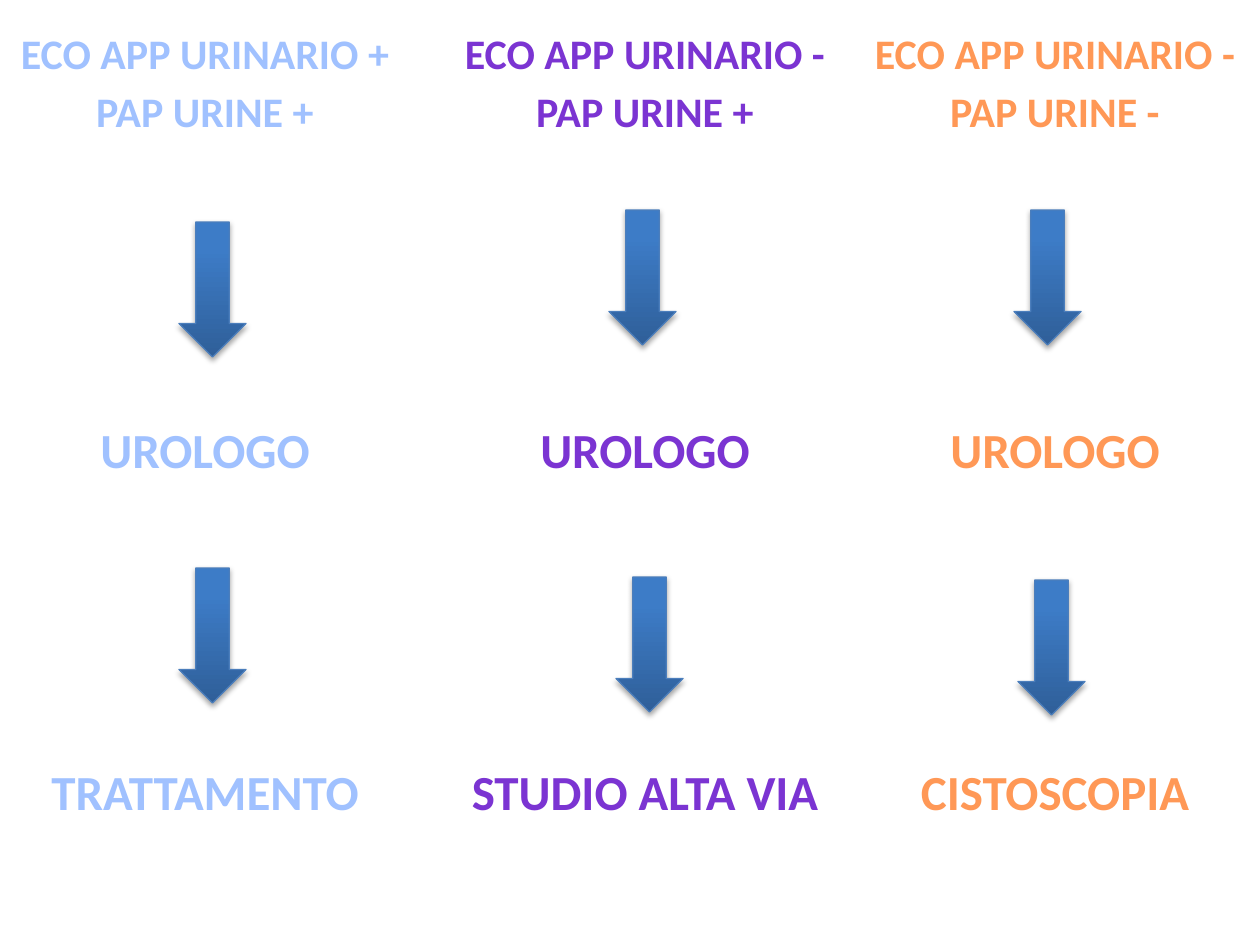
from dataclasses import dataclass

from pptx import Presentation
from pptx.dml.color import RGBColor
from pptx.enum.shapes import MSO_SHAPE
from pptx.enum.text import PP_ALIGN
from pptx.util import Pt

DOWN_ARROW = MSO_SHAPE.DOWN_ARROW
CENTER = PP_ALIGN.CENTER
EMU_PER_PX = 914400 // 126
BLANK_LAYOUT = 6
COLUMN_TOP = 21
ARROW_WIDTH, ARROW_HEIGHT = 67, 135


@dataclass(frozen=True)
class Theme:
    font: str = "Calibri"
    finding_size: int = 24
    step_size: int = 28
    line_gap: float = 4.5
    step_gap: int = 162
    both_positive: str = "A0C1FF"
    urine_positive: str = "7B34D2"
    both_negative: str = "FF9856"
    arrow_dark: str = "2F5F99"
    arrow_light: str = "3D7CC7"
    arrow_line: str = "4B7EBC"
    arrow_line_width: float = 0.75


THEME = Theme()

PATHWAYS = [
    (0, 410, 924, THEME.both_positive,
     ["ECO APP URINARIO +", "PAP URINE +"], ["UROLOGO", "TRATTAMENTO"],
     [(179, 222), (179, 568)]),
    (451, 388, 882, THEME.urine_positive,
     ["ECO APP URINARIO -", "PAP URINE +"], ["UROLOGO", "STUDIO ALTA VIA"],
     [(609, 210), (616, 577)]),
    (850, 410, 872, THEME.both_negative,
     ["ECO APP URINARIO -", "PAP URINE -"], ["UROLOGO", "CISTOSCOPIA"],
     [(1014, 210), (1018, 580)]),
]


def px(*lengths):
    return [length * EMU_PER_PX for length in lengths]


def rgb(value):
    return RGBColor.from_string(value)


def add_pathway_text(slide, left, width, height, color, findings, steps):
    frame = slide.shapes.add_textbox(*px(left, COLUMN_TOP, width, height)).text_frame
    frame.word_wrap = True
    lines = [(text, THEME.finding_size, THEME.line_gap) for text in findings]
    lines += [(text, THEME.step_size, THEME.step_gap) for text in steps]
    for index, (text, size, gap) in enumerate(lines):
        paragraph = frame.add_paragraph() if index else frame.paragraphs[0]
        paragraph.text = text
        paragraph.alignment = CENTER
        paragraph.space_before = Pt(gap if index else 0)
        paragraph.font.name = THEME.font
        paragraph.font.size = Pt(size)
        paragraph.font.bold = True
        paragraph.font.color.rgb = rgb(color)


def add_arrow(slide, left, top):
    arrow = slide.shapes.add_shape(
        DOWN_ARROW, *px(left, top, ARROW_WIDTH, ARROW_HEIGHT))
    arrow.fill.gradient()
    arrow.fill.gradient_angle = 90
    dark, light = arrow.fill.gradient_stops
    dark.color.rgb, dark.position = rgb(THEME.arrow_dark), 0
    light.color.rgb, light.position = rgb(THEME.arrow_light), 0.8
    arrow.line.color.rgb = rgb(THEME.arrow_line)
    arrow.line.width = Pt(THEME.arrow_line_width)


def main():
    presentation = Presentation()
    presentation.slide_width, presentation.slide_height = px(1260, 945)
    slide = presentation.slides.add_slide(presentation.slide_layouts[BLANK_LAYOUT])
    for left, width, height, color, findings, steps, arrows in PATHWAYS:
        add_pathway_text(slide, left, width, height, color, findings, steps)
        for arrow_left, arrow_top in arrows:
            add_arrow(slide, arrow_left, arrow_top)
    presentation.save("out.pptx")


if __name__ == "__main__":
    main()
